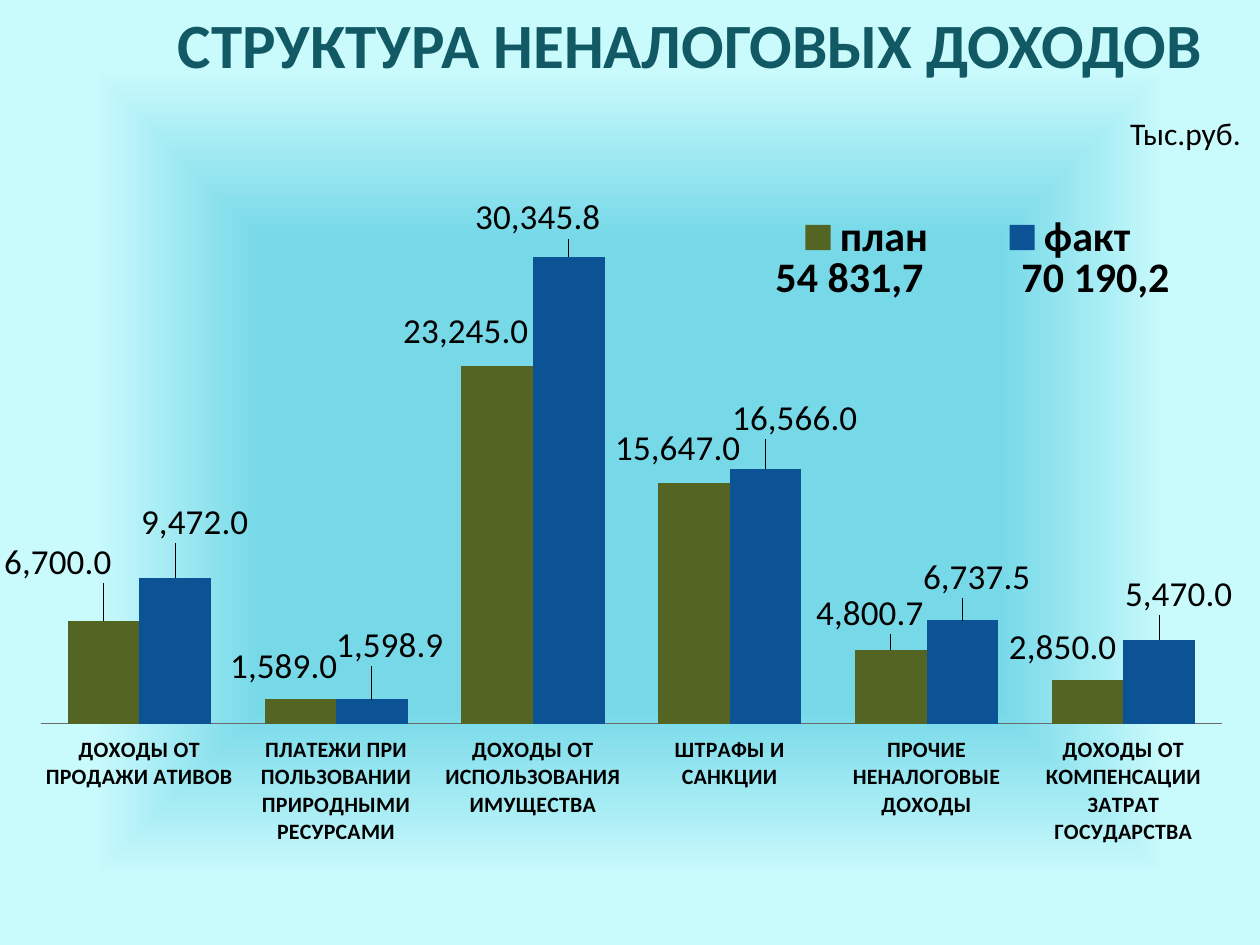
from lxml import etree
from pptx import Presentation
from pptx.chart.data import CategoryChartData
from pptx.dml.color import RGBColor
from pptx.enum.chart import XL_CHART_TYPE as ChartType
from pptx.enum.chart import XL_LABEL_POSITION as LabelPosition
from pptx.enum.chart import XL_LEGEND_POSITION as LegendPosition
from pptx.enum.chart import XL_TICK_LABEL_POSITION as TickLabels
from pptx.enum.chart import XL_TICK_MARK as TickMark
from pptx.enum.text import MSO_ANCHOR as Anchor
from pptx.enum.text import PP_ALIGN as Align
from pptx.oxml import parse_xml
from pptx.oxml.ns import nsdecls, qn
from pptx.util import Emu, Pt

PX = 914400 // 126
COLORS = {"title": "115964", "text": "000000", "plan": "546422", "fact": "0B5394",
          "axis": "6B6B6B", "center": "77D9E8", "edge": "C9FAFC"}

TITLE = "СТРУКТУРА НЕНАЛОГОВЫХ ДОХОДОВ"
TITLE_AREA = (105, 5, 1170, 74)
NOTES = [  # text, size, bold, area
    ("54 831,7", 24, True, (738, 256, 223, 39)),
    ("70 190,2", 24, True, (984, 256, 223, 39)),
    ("Тыс.руб.", 18, False, (1108, 118, 155, 29)),
]

CATEGORIES = [
    "ДОХОДЫ ОТ ПРОДАЖИ АТИВОВ",
    "ПЛАТЕЖИ ПРИ ПОЛЬЗОВАНИИ ПРИРОДНЫМИ РЕСУРСАМИ",
    "ДОХОДЫ ОТ ИСПОЛЬЗОВАНИЯ ИМУЩЕСТВА",
    "ШТРАФЫ И САНКЦИИ",
    "ПРОЧИЕ НЕНАЛОГОВЫЕ ДОХОДЫ",
    "ДОХОДЫ ОТ КОМПЕНСАЦИИ ЗАТРАТ ГОСУДАРСТВА",
]
SERIES = [  # name, color, values, label centres
    ("план", "plan", (6700, 1589, 23245, 15647, 4800.7, 2850),
     ((58, 568), (284, 672), (466, 337), (678, 454), (870, 619), (1063, 653))),
    ("факт", "fact", (9472, 1598.9, 30345.8, 16566, 6737.5, 5470),
     ((195, 528), (390, 651), (538, 223), (795, 424), (977, 583), (1179, 600))),
]
CHART_AREA = (0, 137, 1260, 808)
PLOT_AREA = (41, 185, 1181, 539)
LEGEND_AREA = (738, 212, 460, 50)
AXIS_MAX = 35000
GAP_WIDTH = 75
LABEL_RISE = 21  # from the top of a bar to the centre of its label


def emu(area):
    return [Emu(length * PX) for length in area]


def color(name):
    return RGBColor.from_string(COLORS[name])


def style(font, size, bold=False, name="text", face="Calibri"):
    font.name, font.size, font.bold = face, Pt(size), bold
    font.color.rgb = color(name)


def write(shape, text, size, bold, name="text", anchor=Anchor.MIDDLE):
    frame = shape.text_frame
    frame.word_wrap, frame.vertical_anchor = True, anchor
    para = frame.paragraphs[0]
    para.alignment = Align.CENTER
    span = para.add_run()
    span.text = text
    style(span.font, size, bold, name)
    return para


def paint_background(slide):
    """Gradient that runs from the slide's edges to its centre."""
    fill = slide.background.fill
    fill.gradient()
    for stop, position, name in zip(fill.gradient_stops, (0.5, 0.85), ("center", "edge")):
        stop.position = position
        stop.color.rgb = color(name)
    gradient = slide.background._cSld.find(".//" + qn("a:gradFill"))
    gradient.replace(gradient.find(qn("a:lin")), parse_xml(
        f'<a:path {nsdecls("a")} path="shape">'
        '<a:fillToRect l="50000" t="50000" r="50000" b="50000"/></a:path>'))


def manual_layout(**values):
    layout = parse_xml(f'<c:layout {nsdecls("c")}><c:manualLayout/></c:layout>')
    for tag, value in values.items():
        etree.SubElement(layout[0], qn(f"c:{tag}")).set("val", str(value))
    return layout


def area_layout(area, **target):
    left, top, width, height = area
    chart_left, chart_top, chart_width, chart_height = CHART_AREA
    return manual_layout(
        **target, xMode="edge", yMode="edge",
        x=round((left - chart_left) / chart_width, 4),
        y=round((top - chart_top) / chart_height, 4),
        w=round(width / chart_width, 4), h=round(height / chart_height, 4))


def place_label(point, row, column, value, centre):
    """Shift a label from its place above the bar to the given centre."""
    left, top, width, height = PLOT_AREA
    step = width / len(CATEGORIES)
    bar = step / (len(SERIES) + GAP_WIDTH / 100)
    default_x = left + (column + 0.5) * step + (row - 0.5) * bar
    default_y = top + height * (1 - value / AXIS_MAX) - LABEL_RISE
    label = point.data_label
    style(label.font, 20)
    label.position = LabelPosition.OUTSIDE_END
    element = label._dLbl
    element.find(qn("c:idx")).addnext(manual_layout(
        x=round((centre[0] - default_x) / CHART_AREA[2], 4),
        y=round((centre[1] - default_y) / CHART_AREA[3], 4)))


def add_income_chart(slide):
    data = CategoryChartData(number_format="#,##0.0")
    data.categories = CATEGORIES
    for name, _, values, _ in SERIES:
        data.add_series(name, values)
    chart = slide.shapes.add_chart(
        ChartType.COLUMN_CLUSTERED, *emu(CHART_AREA), data).chart
    chart.has_title = False
    style(chart.font, 18, face="Cambria")

    plot = chart.plots[0]
    plot.gap_width, plot.overlap, plot.vary_by_categories = GAP_WIDTH, 0, False
    for row, (series, (_, name, values, centres)) in enumerate(zip(plot.series, SERIES)):
        series.format.fill.solid()
        series.format.fill.fore_color.rgb = color(name)
        labels = series.data_labels
        labels.show_value = True
        labels.number_format, labels.number_format_is_linked = "#,##0.0", False
        style(labels.font, 20)
        for column, (value, centre) in enumerate(zip(values, centres)):
            place_label(series.points[column], row, column, value, centre)

    axis = chart.category_axis
    axis.major_tick_mark = TickMark.NONE
    axis.tick_label_position = TickLabels.LOW
    axis.format.line.color.rgb = color("axis")
    style(axis.tick_labels.font, 12.5, True)
    scale = chart.value_axis
    scale.minimum_scale, scale.maximum_scale = 0, AXIS_MAX
    scale.has_major_gridlines = scale.visible = False

    chart.has_legend = True
    legend = chart.legend
    legend.position, legend.include_in_layout = LegendPosition.BOTTOM, False
    style(legend.font, 24, True)
    legend._element.find(qn("c:legendPos")).addnext(area_layout(LEGEND_AREA))
    plot_area = chart._chartSpace.chart.plotArea
    for layout in plot_area.findall(qn("c:layout")):
        plot_area.remove(layout)
    plot_area.insert(0, area_layout(PLOT_AREA, layoutTarget="inner"))


def main():
    deck = Presentation()
    deck.slide_width, deck.slide_height = emu((1260, 945))
    slide = deck.slides.add_slide(deck.slide_layouts[5])
    paint_background(slide)

    title = slide.shapes.title
    title.left, title.top, title.width, title.height = emu(TITLE_AREA)
    para = write(title, TITLE, 36, True, "title", Anchor.BOTTOM)
    para.line_spacing = 0.7
    frame = title.text_frame
    frame.margin_left = frame.margin_right = frame.margin_bottom = 0

    for text, size, bold, area in NOTES:
        write(slide.shapes.add_textbox(*emu(area)), text, size, bold)
    add_income_chart(slide)
    deck.save("out.pptx")


if __name__ == "__main__":
    main()
